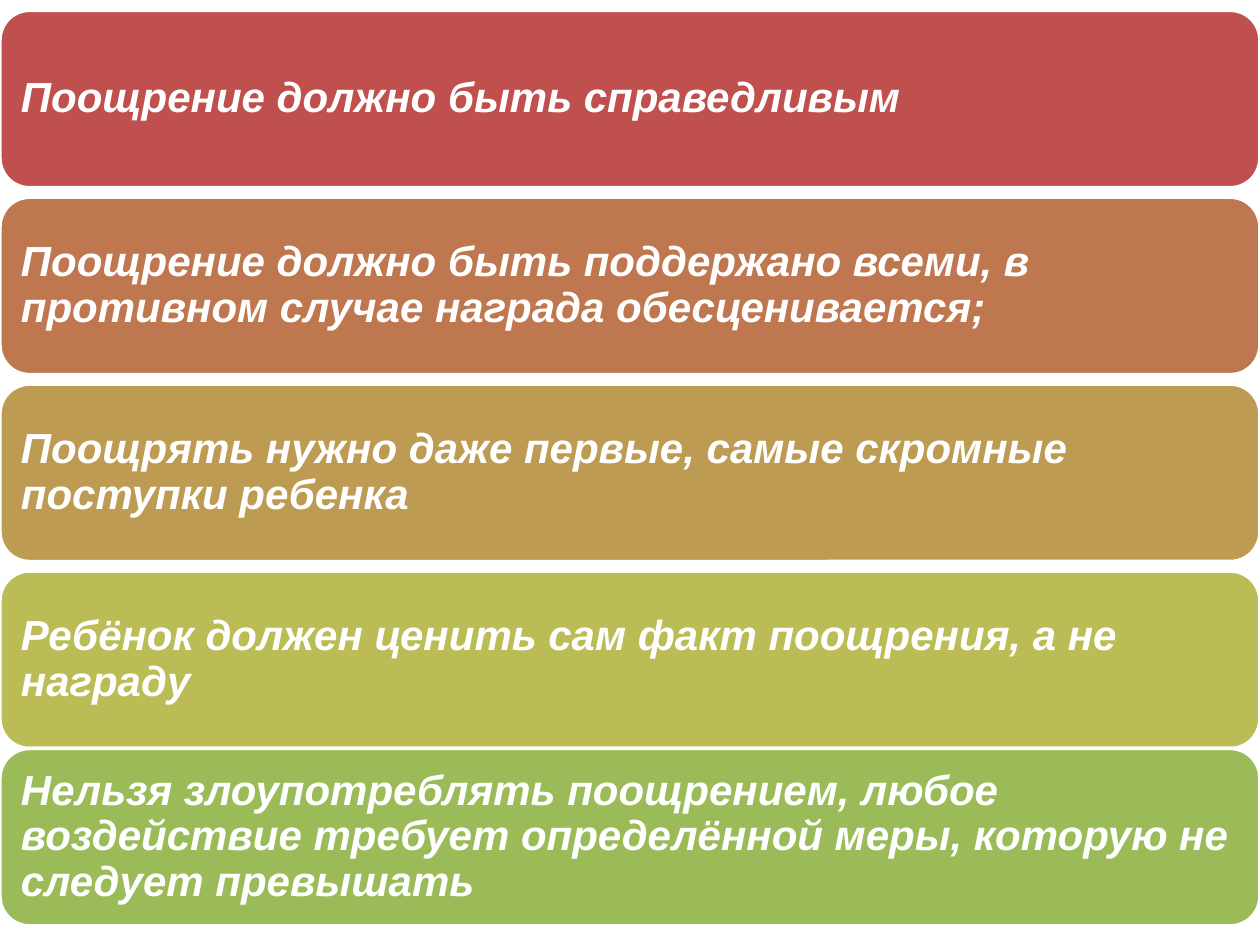
from pptx import Presentation
from pptx.dml.color import RGBColor
from pptx.enum.shapes import MSO_SHAPE
from pptx.enum.text import MSO_ANCHOR, PP_ALIGN
from pptx.util import Pt

HUES = {
    "white": "FFFFFF",
    "red": "C0504D",
    "clay": "BF7750",
    "sand": "BD9B53",
    "lime": "BCBC56",
    "green": "9BBB59",
}

RULES = [
    ("red", "Поощрение должно быть справедливым"),
    ("clay", "Поощрение должно быть поддержано всеми, в противном случае "
             "награда обесценивается;"),
    ("sand", "Поощрять нужно даже первые, самые скромные поступки ребенка"),
    ("lime", "Ребёнок должен ценить сам факт поощрения, а не награду"),
    ("green", "Нельзя злоупотреблять поощрением, любое воздействие требует "
              "определённой меры, которую не следует превышать"),
]

WIDTH, HEIGHT = 720, 540
TOP, STEP, TALL = 5.9, 106.8, 101.4
LAST = 427.7  # the last bar sits closer to the one above


def color(name):
    return RGBColor.from_string(HUES[name])


def write(frame, text, size=24, hue="white", font="Arial", bold=True,
          italic=True, inset=7.2):
    frame.word_wrap = True
    frame.vertical_anchor = MSO_ANCHOR.MIDDLE
    frame.margin_left = frame.margin_right = Pt(inset)
    frame.margin_top = frame.margin_bottom = Pt(inset)
    para = frame.paragraphs[0]
    para.alignment = PP_ALIGN.LEFT
    para.line_spacing = 0.9
    run = para.add_run()
    run.text = text
    run.font.name = font
    run.font.size = Pt(size)
    run.font.bold = bold
    run.font.italic = italic
    run.font.color.rgb = color(hue)


class Deck:
    def __init__(self):
        self.show = Presentation()
        self.show.slide_width = Pt(WIDTH)
        self.show.slide_height = Pt(HEIGHT)
        self.slide = self.show.slides.add_slide(self.show.slide_layouts[6])

    def bar(self, top, hue, text):
        shape = self.slide.shapes.add_shape(
            MSO_SHAPE.ROUNDED_RECTANGLE, Pt(0), Pt(top), Pt(WIDTH), Pt(TALL))
        shape.shadow.inherit = False
        shape.fill.solid()
        shape.fill.fore_color.rgb = color(hue)
        shape.line.color.rgb = color("white")
        shape.line.width = Pt(2)
        write(shape.text_frame, text)


def main():
    deck = Deck()
    # Stack of rules, one bar each
    tops = [TOP + i * STEP for i in range(len(RULES) - 1)] + [LAST]
    for top, (hue, text) in zip(tops, RULES):
        deck.bar(top, hue, text)
    deck.show.save("out.pptx")


if __name__ == "__main__":
    main()
